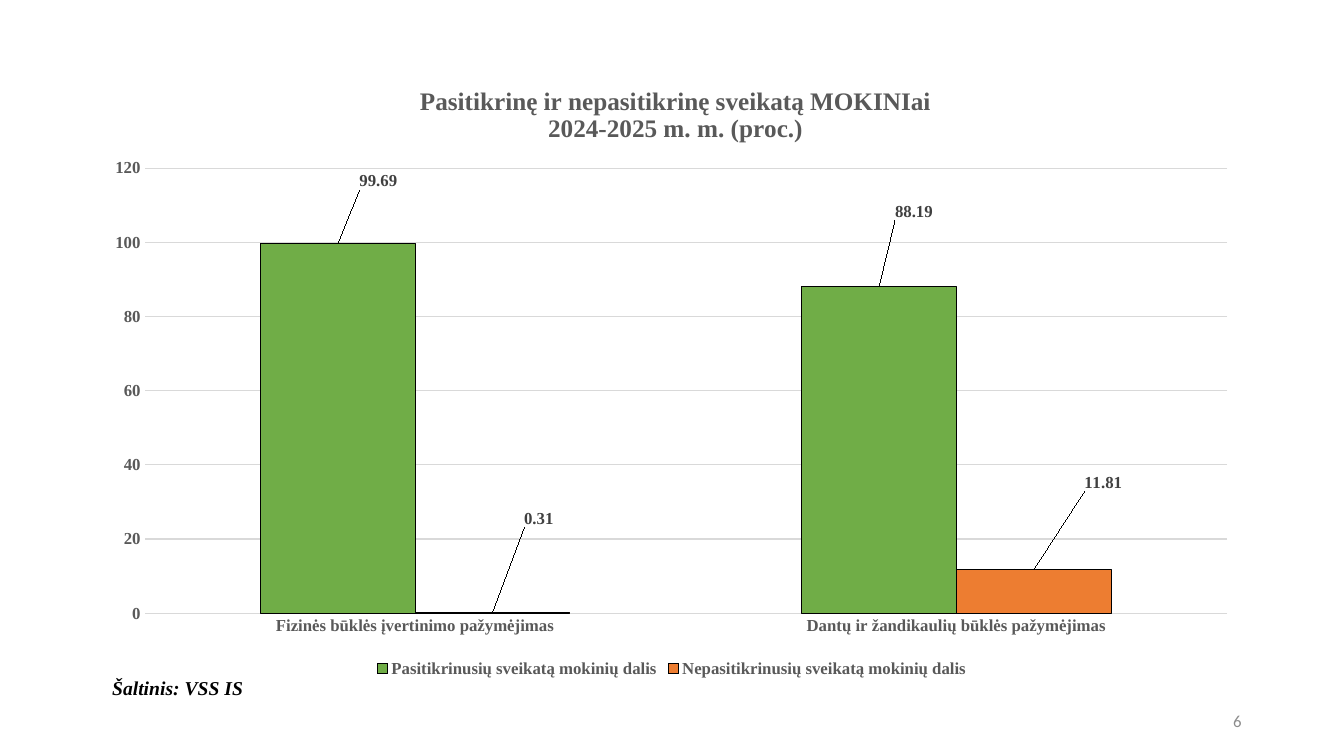
import lxml.etree
import pptx
import pptx.chart.data
import pptx.dml.color
import pptx.enum.chart
import pptx.enum.text
import pptx.oxml.ns
import pptx.util

Pt = pptx.util.Pt
COLORS = {
    "checked": "70AD47",
    "unchecked": "ED7D31",
    "outline": "000000",
    "source": "000000",
    "text": "595959",
    "label": "404040",
    "grid": "D9D9D9",
    "number": "8C8C8C",
}
SERIF = "Times New Roman"
CATEGORIES = [
    "Fizinės būklės įvertinimo pažymėjimas",
    "Dantų ir žandikaulių būklės pažymėjimas",
]
TITLE_LINES = ["Pasitikrinę ir nepasitikrinę sveikatą MOKINIai", "2024-2025 m. m. (proc.)"]
SHARES = [
    ("Pasitikrinusių sveikatą mokinių dalis", [99.69, 88.19], "checked",
     [(0.035, -0.08), (0.03, -0.1)]),
    ("Nepasitikrinusių sveikatą mokinių dalis", [0.31, 11.81], "unchecked",
     [(0.04, -0.13), (0.06, -0.12)]),
]


def rgb(name):
    """Return the named colour."""
    return pptx.dml.color.RGBColor.from_string(COLORS[name])


def style_font(font, size, color, name=SERIF, bold=True, italic=False):
    """Set the look of a font."""
    font.size, font.name, font.bold, font.italic = Pt(size), name, bold, italic
    font.color.rgb = rgb(color)


def set_layout(parent, index, **settings):
    """Give a chart part a manual layout, in fractions of the chart."""
    qn = pptx.oxml.ns.qn
    for old in parent.findall(qn("c:layout")):
        parent.remove(old)
    layout = lxml.etree.Element(qn("c:layout"))
    manual = lxml.etree.SubElement(layout, qn("c:manualLayout"))
    for tag, value in settings.items():
        lxml.etree.SubElement(manual, qn(f"c:{tag}")).set("val", str(value))
    parent.insert(index, layout)


def style_title(chart):
    """Write the two-line chart title."""
    frame = chart.chart_title.text_frame
    frame.text = "\n".join(TITLE_LINES)
    for line in frame.paragraphs:
        style_font(line.font, 18, "text")
    set_layout(chart.chart_title._element, 1, xMode="edge", yMode="edge", x=0.28, y=0.03)
    chart.chart_title.include_in_layout = False


def style_axes(chart):
    """Format both axes and the gridlines."""
    for axis in (chart.category_axis, chart.value_axis):
        axis.major_tick_mark = pptx.enum.chart.XL_TICK_MARK.NONE
        axis.format.line.fill.background()
        style_font(axis.tick_labels.font, 12, "text")
    scale = chart.value_axis
    scale.minimum_scale, scale.maximum_scale, scale.major_unit = 0, 120, 20
    grid = scale.major_gridlines.format.line
    grid.color.rgb, grid.width = rgb("grid"), Pt(0.75)


def style_series(series, color, offsets):
    """Colour a series and shift its value labels."""
    series.format.fill.solid()
    series.format.fill.fore_color.rgb = rgb(color)
    series.format.line.color.rgb = rgb("outline")
    series.format.line.width = Pt(0.75)
    series.invert_if_negative = False
    series.data_labels.show_value = True
    style_font(series.data_labels.font, 12, "label")
    for index, (x, y) in enumerate(offsets):
        label = series.points[index].data_label
        style_font(label.font, 12, "label")
        label.position = pptx.enum.chart.XL_LABEL_POSITION.OUTSIDE_END
        node = series._element.xpath(f"c:dLbls/c:dLbl[c:idx/@val='{index}']")[0]
        set_layout(node, 1, x=x, y=y)


def add_health_chart(slide):
    """Add the clustered column chart of health checks."""
    data = pptx.chart.data.CategoryChartData()
    data.categories = CATEGORIES
    for name, values, _, _ in SHARES:
        data.add_series(name, values)
    chart = slide.shapes.add_chart(
        pptx.enum.chart.XL_CHART_TYPE.COLUMN_CLUSTERED,
        Pt(66), Pt(46), Pt(828), Pt(441), data).chart
    style_font(chart.font, 10, "outline", "Calibri", False)
    style_title(chart)
    style_axes(chart)
    plot = chart.plots[0]
    plot.gap_width, plot.overlap, plot.vary_by_categories = 150, 0, False
    for series, (_, _, color, offsets) in zip(plot.series, SHARES):
        style_series(series, color, offsets)
    set_layout(plot._element.getparent(), 0, layoutTarget="inner", xMode="edge",
               yMode="edge", x=0.045, y=0.168, w=0.934, h=0.721)
    chart.has_legend = True
    chart.legend.position = pptx.enum.chart.XL_LEGEND_POSITION.BOTTOM
    chart.legend.include_in_layout = False
    style_font(chart.legend.font, 12, "text")


def add_text(slide, text, box, wrap=True):
    """Add a one-line text box and return its text frame."""
    frame = slide.shapes.add_textbox(*map(Pt, box)).text_frame
    frame.word_wrap = wrap
    frame.text = text
    return frame


def main():
    """Build the slide and save it."""
    deck = pptx.Presentation()
    deck.slide_width, deck.slide_height = Pt(960), Pt(540)
    slide = deck.slides.add_slide(deck.slide_layouts[6])
    add_health_chart(slide)
    source = add_text(slide, "Šaltinis: VSS IS", (73, 479, 109, 24), wrap=False)
    source.auto_size = pptx.enum.text.MSO_AUTO_SIZE.SHAPE_TO_FIT_TEXT
    style_font(source.paragraphs[0].font, 14, "source", italic=True)
    number = add_text(slide, "6", (678, 500.5, 216, 29))
    number.vertical_anchor = pptx.enum.text.MSO_ANCHOR.MIDDLE
    number.paragraphs[0].alignment = pptx.enum.text.PP_ALIGN.RIGHT
    style_font(number.paragraphs[0].font, 12, "number", "Calibri", False)
    deck.save("out.pptx")


if __name__ == "__main__":
    main()
